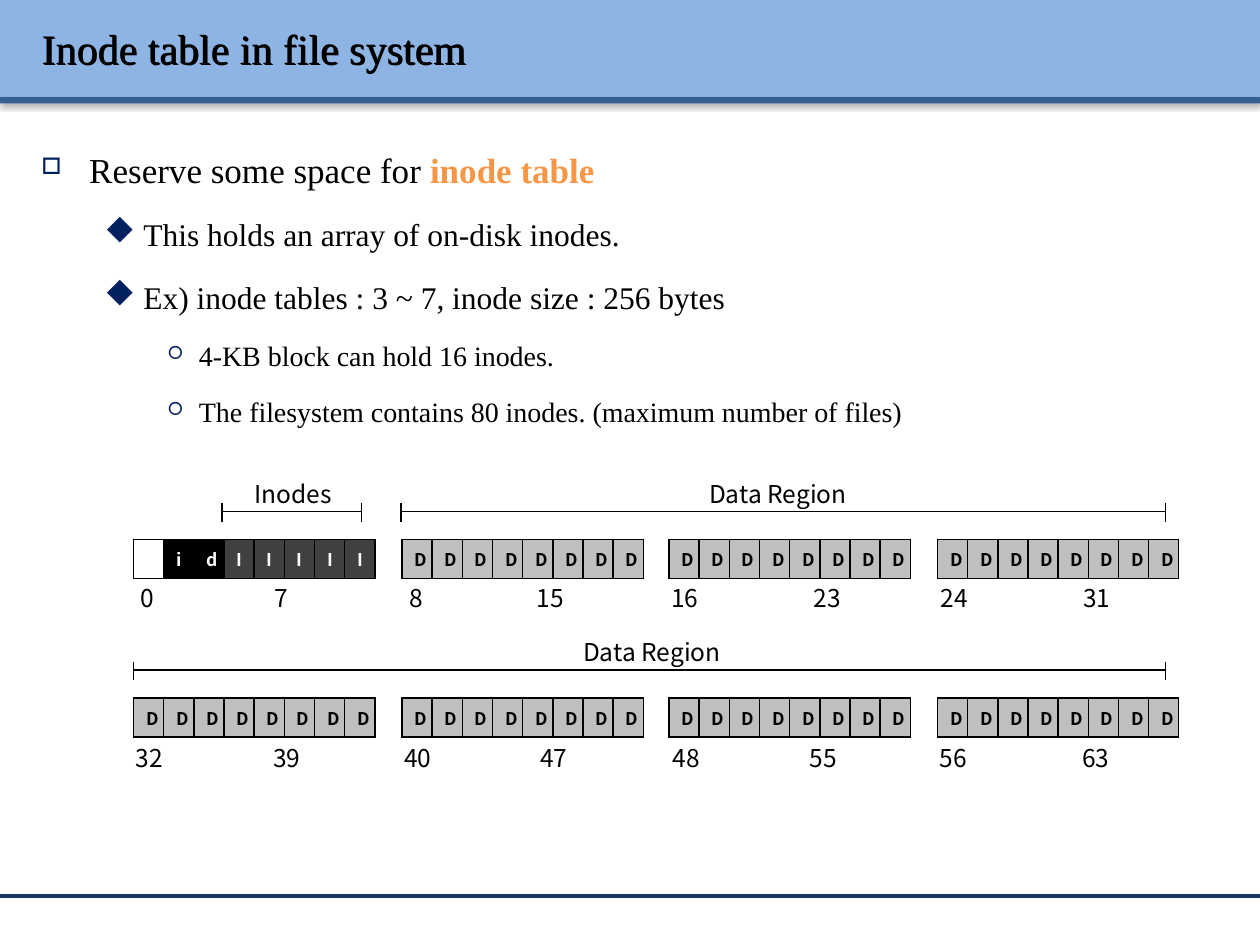
"""Builds a slide showing where the inode table sits on a small disk."""
from lxml import etree
from pptx import Presentation
from pptx import util as u
from pptx.dml.color import RGBColor
from pptx.enum import shapes, text
from pptx.oxml import ns

COLORS = {
    "black": "000000", "white": "FFFFFF", "band": "8EB4E3", "rule": "376092",
    "footer": "17375E", "bullet": "002060", "accent": "F79646",
    "inode": "404040", "data": "BFBFBF",
}
SERIF, SANS, SYMBOLS = "Times New Roman", "Noto Sans CJK KR", "Wingdings"
BULLETS = [
    {"char": "o", "percent": 65, "margin": 0.38, "hang": 0.38, "size": 20},
    {"char": "u", "percent": 100, "margin": 0.81, "hang": 0.31, "size": 18},
    {"char": "¡", "percent": 65, "margin": 1.25, "hang": 0.25, "size": 16},
]
OUTLINE = [
    (0, "Reserve some space for ", "inode table"),
    (1, "This holds an array of on-disk inodes.", ""),
    (1, "Ex) inode tables : 3 ~ 7, inode size : 256 bytes", ""),
    (2, "4-KB block can hold 16 inodes.", ""),
    (2, "The filesystem contains 80 inodes. (maximum number of files)", ""),
]
BLOCKS = 8
GROUP_LEFTS = [1.06, 3.19, 5.31, 7.44]
ROWS = [
    {"top": 4.28, "label_top": 4.58,
     "labels": [(1.02, 1.06), (3.15, 1.01), (5.23, 1.13), (7.37, 1.13)]},
    {"top": 5.54, "label_top": 5.85,
     "labels": [(0.98, 1.09), (3.11, 1.08), (5.24, 1.09), (7.36, 1.13)]},
]
FIRST_GROUP = [("", "white"), ("i", "black"), ("d", "black")] + [("I", "inode")] * 5
DATA_GROUP = [("D", "data")] * BLOCKS
BRACKETS = [
    ("Data Region", 3.18, 9.25, 3.99, 5.53, 1.36),
    ("Data Region", 1.06, 9.25, 5.25, 4.53, 1.36),
    ("Inodes", 1.76, 2.87, 3.99, 1.92, 0.84),
]


def color(name):
    """Return the named colour."""
    return RGBColor.from_string(COLORS[name])


def child(parent, tag, **attributes):
    """Append a drawing element to the parent."""
    values = {key: str(value) for key, value in attributes.items()}
    return etree.SubElement(parent, ns.qn("a:" + tag), values)


def solid(parent, name):
    """Append a solid fill to the parent."""
    child(child(parent, "solidFill"), "srgbClr", val=COLORS[name])


def add_shadow(box, blur, distance, angle, alpha):
    """Give a shape an outer shadow."""
    effects = child(box._element.spPr, "effectLst")
    shadow = child(effects, "outerShdw", blurRad=u.Pt(blur), dist=u.Pt(distance),
                   dir=angle * 60000, algn="t", rotWithShape=0)
    tint = child(shadow, "srgbClr", val=COLORS["black"])
    child(tint, "alpha", val=alpha * 1000)


class SlideBuilder:
    """Holds the text style and the current slide."""

    def __init__(self, slide):
        """Start on the given slide."""
        self.slide = slide
        self.items = slide.shapes

    def style(self, span, size, font=SANS, tint="black", bold=False):
        """Format one run."""
        span.font.size, span.font.name, span.font.bold = u.Pt(size), font, bold
        span.font.color.rgb = color(tint)

    def bar(self, top, height, fill):
        """Add a full-width shaded bar."""
        box = self.items.add_shape(shapes.MSO_SHAPE.RECTANGLE, 0, u.Inches(top),
                                   u.Inches(10), u.Inches(height))
        box.fill.solid()
        box.fill.fore_color.rgb = color(fill)
        box.line.fill.background()
        add_shadow(box, 3.1, 1.6, 90, 38)

    def line(self, x1, y1, x2, y2, tint="black", width=1):
        """Add a straight line."""
        rule = self.items.add_connector(shapes.MSO_CONNECTOR.STRAIGHT, u.Inches(x1),
                                        u.Inches(y1), u.Inches(x2), u.Inches(y2))
        rule.line.color.rgb = color(tint)
        rule.line.width = u.Pt(width)
        child(rule._element.spPr, "effectLst")

    def title(self, words):
        """Fill the title placeholder and bring it in front of the band."""
        box = self.items.title
        self.items._spTree.append(box._element)
        box.left, box.top = u.Inches(0.23), u.Inches(0.06)
        box.width, box.height = u.Inches(9.61), u.Inches(0.64)
        box.fill.background()
        box.line.fill.background()
        add_shadow(box, 0, 1, 45, 100)
        box.text_frame.text = words
        box.text_frame.vertical_anchor = text.MSO_ANCHOR.MIDDLE
        para = box.text_frame.paragraphs[0]
        para.alignment = text.PP_ALIGN.LEFT
        self.style(para.runs[0], 24, SERIF)

    def text_box(self, left, top, width, height):
        """Add an empty wrapping text box and return its frame."""
        box = self.items.add_textbox(u.Inches(left), u.Inches(top),
                                     u.Inches(width), u.Inches(height))
        box.text_frame.word_wrap = True
        return box.text_frame

    def outline(self, entries):
        """Add the bulleted text."""
        frame = self.text_box(0.23, 0.96, 9.61, 6.02)
        for index, (level, words, accent) in enumerate(entries):
            para = frame.add_paragraph() if index else frame.paragraphs[0]
            look = BULLETS[level]
            para.level, para.line_spacing = level, 1.5
            properties = para._p.get_or_add_pPr()
            properties.set("marL", str(u.Inches(look["margin"])))
            properties.set("indent", str(-u.Inches(look["hang"])))
            child(child(properties, "spcBef"), "spcPct", val=20000)
            child(child(properties, "buClr"), "srgbClr", val=COLORS["bullet"])
            child(properties, "buSzPct", val=look["percent"] * 1000)
            child(properties, "buFont", typeface=SYMBOLS, pitchFamily=2, charset=2)
            child(properties, "buChar", char=look["char"])
            for part, tint in ((words, "black"), (accent, "accent")):
                if part:
                    span = para.add_run()
                    span.text = part
                    self.style(span, look["size"], SERIF, tint, tint == "accent")

    def label(self, words, left, top, width, tab=None):
        """Add a caption, with a tab stop if one is given."""
        frame = self.text_box(left, top, width, 0.34)
        frame.auto_size = text.MSO_AUTO_SIZE.SHAPE_TO_FIT_TEXT
        frame.text = words
        para = frame.paragraphs[0]
        self.style(para.runs[0], 14)
        if tab:
            stops = child(para._p.get_or_add_pPr(), "tabLst")
            child(stops, "tab", pos=u.Inches(tab), algn="l")

    def blocks(self, left, top, cells):
        """Add one group of disk blocks as a table."""
        width = u.Inches(1.82)
        table = self.items.add_table(1, len(cells), u.Inches(left), u.Inches(top),
                                     width, u.Inches(0.31)).table
        table.first_row = table.horz_banding = False
        for index, (letter, fill) in enumerate(cells):
            table.columns[index].width = width // len(cells)
            cell = table.cell(0, index)
            cell.vertical_anchor = text.MSO_ANCHOR.MIDDLE
            properties = cell._tc.get_or_add_tcPr()
            for side in ("lnL", "lnR", "lnT", "lnB"):
                solid(child(properties, side, w=u.Pt(1)), "black")
            solid(properties, fill)
            para = cell.text_frame.paragraphs[0]
            para.alignment = text.PP_ALIGN.CENTER
            para.font.size = u.Pt(10)
            if letter:
                para.text = letter
                tint = "black" if fill == "data" else "white"
                self.style(para.runs[0], 10, tint=tint, bold=True)

    def bracket(self, words, left, right, top, label_left, label_width):
        """Add a captioned span with an upright at each end."""
        for x in (left, right):
            self.line(x, top, x, top + 0.15)
        self.line(left, top + 0.07, right, top + 0.07)
        self.label(words, label_left, top - 0.24, label_width)


def main():
    """Build and save the deck."""
    deck = Presentation()
    deck.slide_width, deck.slide_height = u.Inches(10), u.Inches(7.5)
    page = SlideBuilder(deck.slides.add_slide(deck.slide_layouts[5]))
    page.bar(0, 0.77, "band")
    page.bar(0.77, 0.05, "rule")
    page.line(0, 7.11, 10, 7.11, "footer", 2)
    page.title("Inode table in file system")
    page.outline(OUTLINE)
    first = 0
    for row in ROWS:
        for left, (label_left, tab) in zip(GROUP_LEFTS, row["labels"]):
            page.blocks(left, row["top"], DATA_GROUP if first else FIRST_GROUP)
            page.label(f"{first}\t{first + BLOCKS - 1}", label_left,
                       row["label_top"], 2.03, tab)
            first += BLOCKS
    for bracket in BRACKETS:
        page.bracket(*bracket)
    deck.save("out.pptx")


if __name__ == "__main__":
    main()
